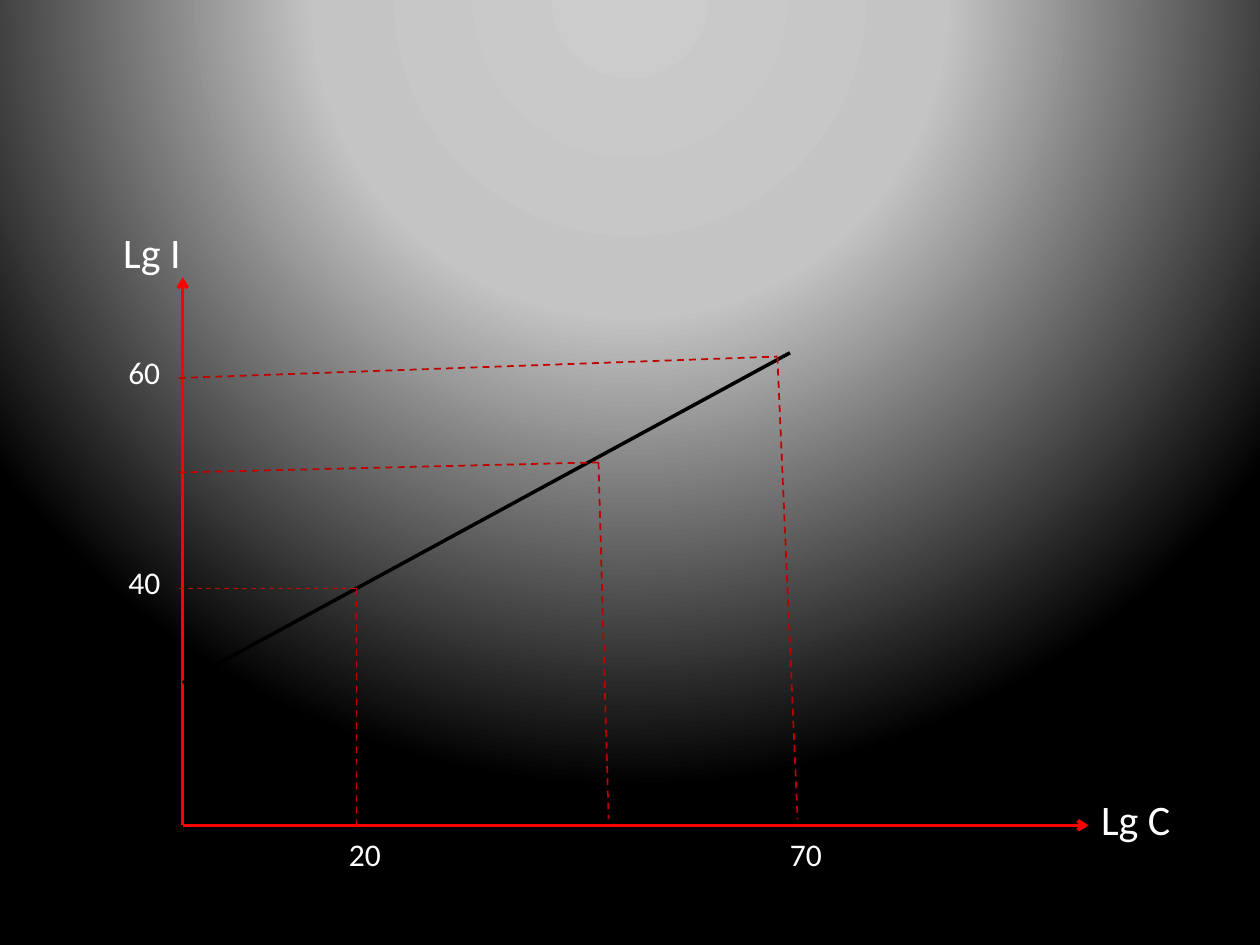
from dataclasses import dataclass

from pptx import Presentation
from pptx.dml.color import RGBColor
from pptx.enum.dml import MSO_LINE_DASH_STYLE as Dash
from pptx.enum.shapes import MSO_CONNECTOR as Conn
from pptx.enum.text import MSO_AUTO_SIZE as AutoSize
from pptx.oxml import parse_xml
from pptx.oxml.ns import nsdecls, qn
from pptx.util import Inches, Pt


@dataclass(frozen=True)
class Theme:
    font: str = "Calibri"
    text: str = "FFFFFF"
    axis: str = "FF0000"
    trend: str = "000000"
    guide: str = "C00000"
    glow: tuple = ((0, "CCCCCC"), (40, "C4C4C4"), (100, "000000"))
    axis_size: int = 24
    tick_size: int = 18


@dataclass(frozen=True)
class Guide:
    """A point on the trend line, with the ends of its guides on both axes."""
    x: float
    y: float
    left_y: float
    foot_x: float
    foot_y: float = 6.5
    left_width: float = 1


@dataclass(frozen=True)
class Label:
    text: str
    x: float
    y: float
    w: float


THEME = Theme()
ORIGIN = (1.45, 6.55)
GUIDE_LEFT = 1.42
GUIDES = (
    Guide(2.83, 4.67, 4.67, 2.83, foot_y=6.58, left_width=0.75),
    Guide(4.75, 3.67, 3.75, 4.83),
    Guide(6.17, 2.83, 3, 6.33),
)
TICKS = (
    Label("20", 2.67, 6.58, 0.75),
    Label("70", 6.17, 6.58, 0.58),
    Label("40", 0.92, 4.42, 0.75),
    Label("60", 0.92, 2.75, 0.67),
)


def set_background(s) -> None:
    """Fill the slide with a round glow centred above its top edge."""
    s.background.fill.gradient()
    old = s.element.find(".//" + qn("a:gradFill"))
    stops = "".join(
        f'<a:gs pos="{pos * 1000}"><a:srgbClr val="{color}"/></a:gs>'
        for pos, color in THEME.glow)
    old.getparent().replace(old, parse_xml(
        f'<a:gradFill {nsdecls("a")} rotWithShape="1"><a:gsLst>{stops}</a:gsLst>'
        '<a:path path="circle"><a:fillToRect l="50000" t="-80000" r="50000" '
        'b="180000"/></a:path></a:gradFill>'))


def add_line(s, start: tuple, end: tuple, color: str, width: float = 2,
             dashed: bool = False, arrow: bool = False) -> None:
    line = s.shapes.add_connector(
        Conn.STRAIGHT, *(Inches(v) for v in (*start, *end)))
    line.line.color.rgb = RGBColor.from_string(color)
    line.line.width = Pt(width)
    if dashed:
        line.line.dash_style = Dash.DASH
    if arrow:
        line.line._get_or_add_ln().append(
            parse_xml(f'<a:tailEnd {nsdecls("a")} type="arrow"/>'))
    line._element.spPr.append(parse_xml(f'<a:effectLst {nsdecls("a")}/>'))


def add_text(s, label: Label, *, size: int, height: float,
             wrap: bool = True) -> None:
    box = s.shapes.add_textbox(
        *(Inches(v) for v in (label.x, label.y, label.w, height)))
    tf = box.text_frame
    tf.word_wrap = wrap
    tf.auto_size = AutoSize.SHAPE_TO_FIT_TEXT
    r = tf.paragraphs[0].add_run()
    r.text = label.text
    r.font.name = THEME.font
    r.font.size = Pt(size)
    r.font.color.rgb = RGBColor.from_string(THEME.text)


def main() -> None:
    prs = Presentation()
    prs.slide_width, prs.slide_height = Inches(10), Inches(7.5)
    s = prs.slides.add_slide(prs.slide_layouts[6])
    set_background(s)

    # Axes and trend line
    for tip in ((ORIGIN[0], 2.2), (8.64, ORIGIN[1])):
        add_line(s, ORIGIN, tip, THEME.axis, arrow=True)
    add_line(s, (ORIGIN[0], 5.42), (6.27, 2.8), THEME.trend)

    # Axis names
    add_text(s, Label("Lg I", 0.88, 1.75, 1.23),
             size=THEME.axis_size, height=0.45)
    add_text(s, Label("Lg C", 8.64, 6.25, 0.86),
             size=THEME.axis_size, height=0.45, wrap=False)

    # Dashed guides from each point to both axes
    for g in GUIDES:
        point = (g.x, g.y)
        add_line(s, (GUIDE_LEFT, g.left_y), point, THEME.guide,
                 g.left_width, dashed=True)
        add_line(s, point, (g.foot_x, g.foot_y), THEME.guide, 1, dashed=True)

    # Tick values
    for tick in TICKS:
        add_text(s, tick, size=THEME.tick_size, height=0.4)

    prs.save("out.pptx")


if __name__ == "__main__":
    main()
